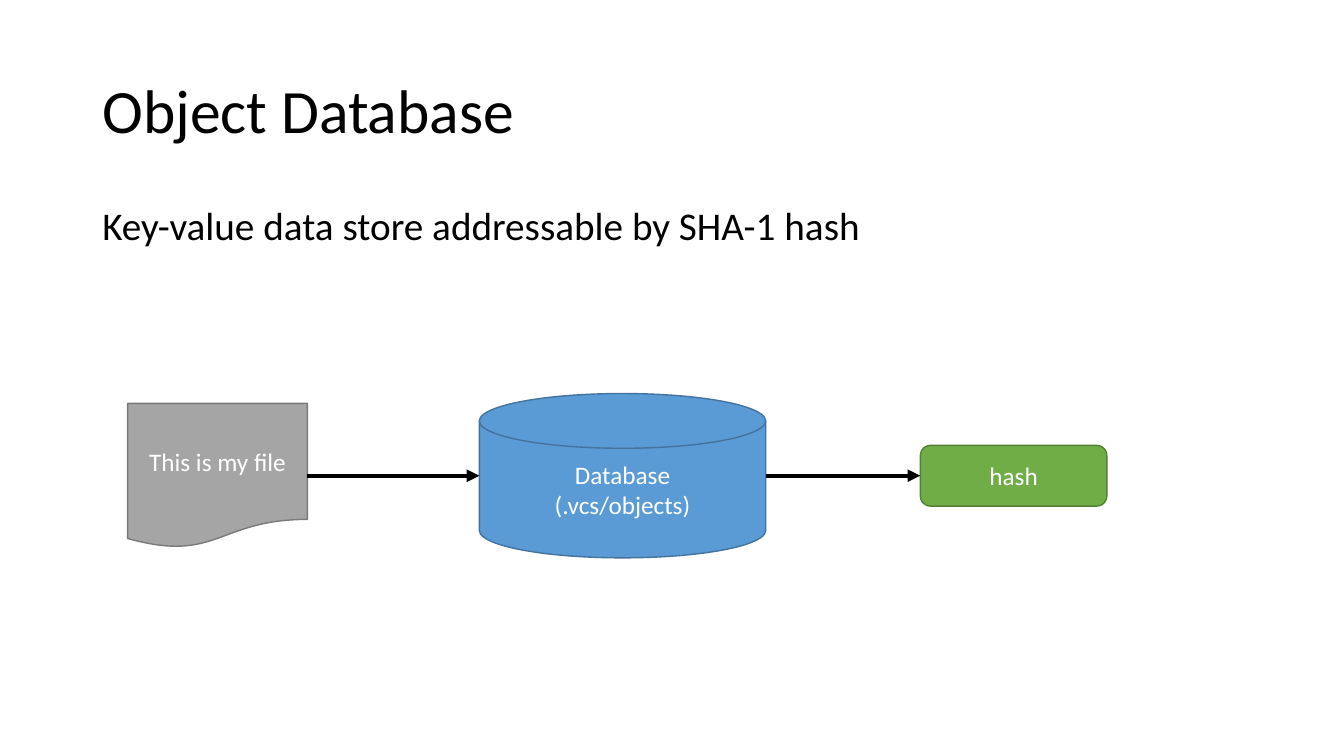
from lxml import etree
from pptx import Presentation
from pptx.dml.color import RGBColor
from pptx.enum import shapes, text
from pptx.oxml.ns import qn
from pptx.util import Pt

COLORS = {
    "ink": "000000", "paper": "FFFFFF",
    "file": "A5A5A5", "file_edge": "7A7A7A",
    "database": "5B9BD5", "database_edge": "43739E",
    "hash": "70AD47", "hash_edge": "538035",
}
FONT = "Calibri"
SHAPE = shapes.MSO_SHAPE

# words, top, height, size, space before, anchor
HEADINGS = [
    ("Object Database", 28.8, 104.4, 44, 0, text.MSO_ANCHOR.MIDDLE),
    ("Key-value data store addressable by SHA-1 hash", 144, 48.24, 28, 10,
     text.MSO_ANCHOR.TOP),
]
HEADING_LEFT, HEADING_WIDTH = 66, 828

# colour, outline, lines, left, width, height
STAGES = [
    ("file", SHAPE.FLOWCHART_DOCUMENT, ["This is my file"], 91.2, 128.4, 103.4),
    ("database", SHAPE.FLOWCHART_MAGNETIC_DISK, ["Database", "(.vcs/objects)"],
     342.4, 204.6, 117.4),
    ("hash", SHAPE.ROUNDED_RECTANGLE, ["hash"], 657.4, 133.2, 43.4),
]
FLOW_MIDDLE = 339.8


def rgb(name):
    return RGBColor.from_string(COLORS[name])


def write(frame, lines, size, color, anchor, **paragraph_format):
    frame.word_wrap = True
    frame.vertical_anchor = anchor
    for number, line in enumerate(lines):
        paragraph = frame.add_paragraph() if number else frame.paragraphs[0]
        for attribute, value in paragraph_format.items():
            setattr(paragraph, attribute, value)
        run = paragraph.add_run()
        run.text = line
        for attribute, value in {"name": FONT, "size": Pt(size)}.items():
            setattr(run.font, attribute, value)
        run.font.color.rgb = rgb(color)


def add_heading(slide, words, top, height, size, space_before, anchor):
    box = slide.shapes.add_textbox(
        Pt(HEADING_LEFT), Pt(top), Pt(HEADING_WIDTH), Pt(height))
    write(box.text_frame, [words], size, "ink", anchor,
          line_spacing=0.9, space_before=Pt(space_before))


def add_stage(slide, color, outline, lines, left, width, height):
    stage = slide.shapes.add_shape(
        outline, Pt(left), Pt(FLOW_MIDDLE - height / 2), Pt(width), Pt(height))
    stage.shadow.inherit = False
    stage.fill.solid()
    stage.fill.fore_color.rgb = rgb(color)
    stage.line.color.rgb = rgb(color + "_edge")
    stage.line.width = Pt(1)
    write(stage.text_frame, lines, 18, "paper", text.MSO_ANCHOR.MIDDLE,
          alignment=text.PP_ALIGN.CENTER)
    return stage


def add_arrow(slide, source, target):
    """Join two stages; the disk has no side sites in the usual order, so it stays unglued."""
    arrow = slide.shapes.add_connector(
        shapes.MSO_CONNECTOR.STRAIGHT, source.left + source.width,
        Pt(FLOW_MIDDLE), target.left, Pt(FLOW_MIDDLE))
    if source.auto_shape_type != SHAPE.FLOWCHART_MAGNETIC_DISK:
        arrow.begin_connect(source, 3)
    if target.auto_shape_type != SHAPE.FLOWCHART_MAGNETIC_DISK:
        arrow.end_connect(target, 1)
    arrow.line.color.rgb = rgb("ink")
    arrow.line.width = Pt(3)
    properties = arrow.element.spPr
    etree.SubElement(properties.find(qn("a:ln")), qn("a:tailEnd"), type="triangle")
    etree.SubElement(properties, qn("a:effectLst"))


def main():
    deck = Presentation()
    deck.slide_width, deck.slide_height = Pt(960), Pt(540)
    slide = deck.slides.add_slide(deck.slide_layouts[6])
    for heading in HEADINGS:
        add_heading(slide, *heading)
    stages = [add_stage(slide, *stage) for stage in STAGES]
    for source, target in zip(stages, stages[1:]):
        add_arrow(slide, source, target)
    deck.save("out.pptx")


if __name__ == "__main__":
    main()
